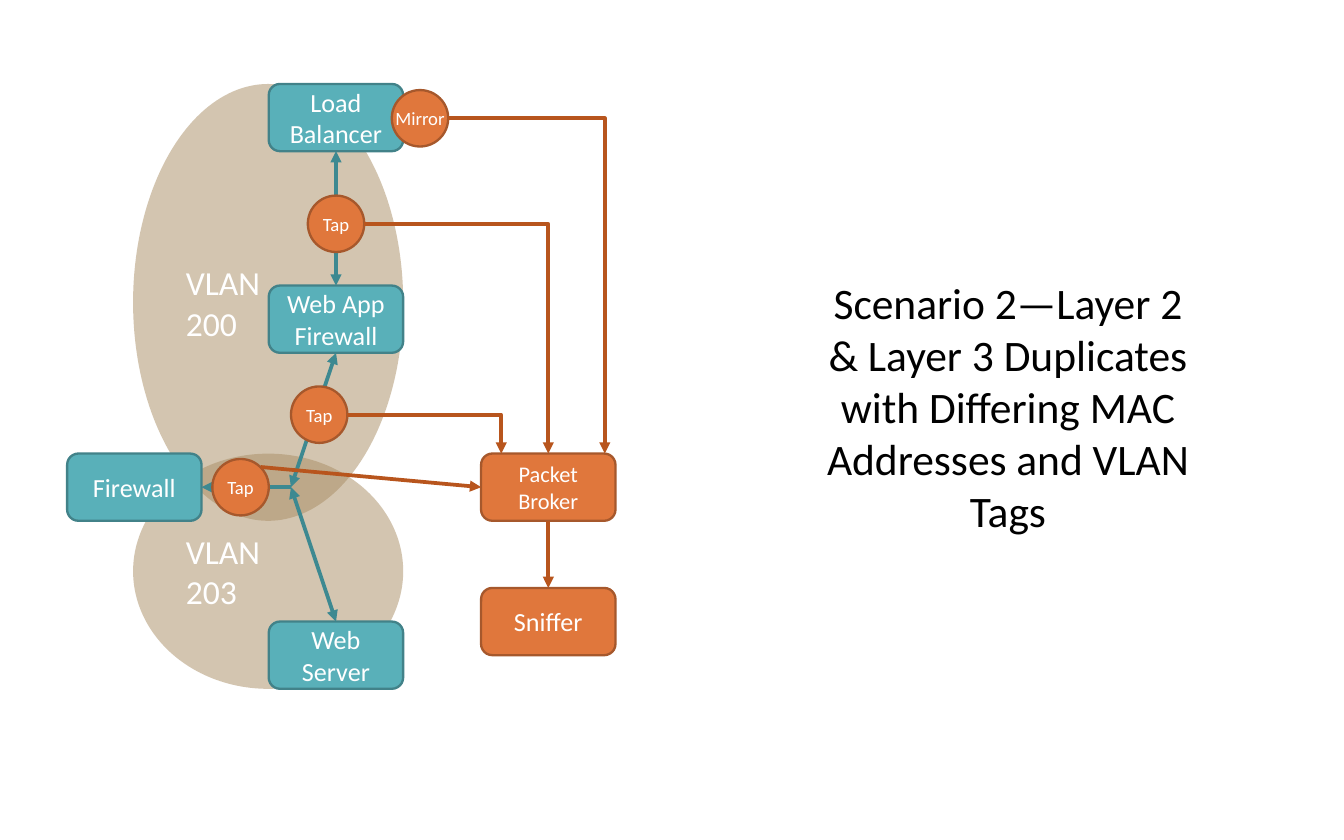
import pptx
import pptx.util
import pptx.dml.color
import pptx.enum.shapes
import pptx.enum.text
import pptx.oxml
import pptx.oxml.ns

Pt = pptx.util.Pt
RGB = pptx.dml.color.RGBColor.from_string
KIND = pptx.enum.shapes.MSO_SHAPE
LINK = pptx.enum.shapes.MSO_CONNECTOR
ALIGN = pptx.enum.text.PP_ALIGN
MID = pptx.enum.text.MSO_ANCHOR.MIDDLE
qn = pptx.oxml.ns.qn

INK = {
    "sand": "A98D63", "white": "FFFFFF", "black": "000000",
    "teal": "59B0B9", "teal edge": "428289", "teal line": "3D8991",
    "rust": "E0773C", "rust edge": "A6582C", "rust line": "B8551D",
}

deck = pptx.Presentation()
deck.slide_width = pptx.util.Inches(10)
deck.slide_height = pptx.util.Inches(6.25)
W, H = deck.slide_width, deck.slide_height
slide = deck.slides.add_slide(deck.slide_layouts[6])

# Grid: 20 columns across, square cells, first row a tenth of the way down
CELL = W // 20
TOP = H // 10


def node(kind, col, row, wide, high, text, size, hue, align=ALIGN.CENTER):
    box = slide.shapes.add_shape(
        kind, int(col * CELL), int(TOP + row * CELL), int(wide * CELL), int(high * CELL))
    box.shadow.inherit = False
    box.fill.solid()
    box.fill.fore_color.rgb = RGB(INK[hue])
    if hue + " edge" in INK:
        box.line.color.rgb = RGB(INK[hue + " edge"])
        box.line.width = Pt(1.25)
    else:
        box.line.fill.background()
    frame = box.text_frame
    frame.vertical_anchor = MID
    frame.text = text
    for para in frame.paragraphs:
        para.alignment = align
        para.font.size = Pt(size)
        para.font.name = "Calibri"
        para.font.color.rgb = RGB(INK["white"])
    return box


def link(start, end, hue, ends, bent=False):
    (c1, r1), (c2, r2) = start, end
    line = slide.shapes.add_connector(
        LINK.ELBOW if bent else LINK.STRAIGHT,
        int(c1 * CELL), int(TOP + r1 * CELL), int(c2 * CELL), int(TOP + r2 * CELL))
    line.line.color.rgb = RGB(INK[hue])
    line.line.width = Pt(2)
    props = line._element.spPr
    if bent:
        props.find(qn("a:prstGeom")).set("prst", "bentConnector2")
    for tag in ends:
        pptx.oxml.ns  # arrowheads follow the line colour
        props.find(qn("a:ln")).append(pptx.oxml.parse_xml(
            f'<a:{tag} {pptx.oxml.ns.nsdecls("a")} type="triangle"/>'))
    props.append(pptx.oxml.parse_xml(f'<a:effectLst {pptx.oxml.ns.nsdecls("a")}/>'))


# VLAN areas, half transparent
for name, row, high in (("VLAN\n200", 0, 6.5), ("VLAN\n203", 5.5, 3.5)):
    area = node(KIND.OVAL, 1.98, row, 4.02, high, name, 18, "sand", ALIGN.LEFT)
    tint = area._element.spPr.find(qn("a:solidFill"))[0]
    tint.append(pptx.oxml.parse_xml(
        f'<a:alpha {pptx.oxml.ns.nsdecls("a")} val="50000"/>'))

# Title
title = slide.shapes.add_textbox(int(W * 0.6), H // 15, int(W * 0.3), H * 5 // 6)
frame = title.text_frame
frame.word_wrap = True
frame.vertical_anchor = MID
para = frame.paragraphs[0]
para.text = "Scenario 2—Layer 2 & Layer 3 Duplicates with Differing MAC Addresses and VLAN Tags"
para.alignment = ALIGN.CENTER
para.font.size = Pt(23.3)
para.font.name = "Calibri"
para.font.color.rgb = RGB(INK["black"])

# Devices
SIDE = 7.16
for name, col, row, size, hue in (
    ("Load Balancer", 4, 0, 14, "teal"),
    ("Web App Firewall", 4, 3, 14, "teal"),
    ("Web Server", 4, 8, 14, "teal"),
    ("Firewall", 1, 5.5, 14, "teal"),
    ("Packet Broker", SIDE, 5.5, 12, "rust"),
    ("Sniffer", SIDE, 7.5, 14, "rust"),
):
    node(KIND.ROUNDED_RECTANGLE, col, row, 2, 1, name, size, hue)

# Network traffic, meeting at one joint
BOTH = ("headEnd", "tailEnd")
joint = (4.33, 6)
link((5, 1), (5, 3), "teal line", BOTH)
link((5, 4), joint, "teal line", BOTH)
link((3, 6), joint, "teal line", BOTH[:1])
link(joint, (5, 8), "teal line", BOTH)

# Taps and mirror, placed by their centres
SPAN = 0.84
for name, col, row in (
    ("Mirror", 6.25, 0.51), ("Tap", 5, 2.08), ("Tap", 4.75, 4.92), ("Tap", 3.58, 6),
):
    disc = node(KIND.OVAL, col - SPAN / 2, row - SPAN / 2, SPAN, SPAN, name, 10, "rust")
    disc.text_frame.margin_left = disc.text_frame.margin_right = 0
    disc.text_frame.word_wrap = False

# Copied traffic into the broker and on to the sniffer
hub = SIDE + 1
for start, end, bent in (
    ((6.67, 0.51), (9, 5.5), True),
    ((5.42, 2.08), (hub, 5.5), True),
    ((5.17, 4.92), (7.46, 5.5), True),
    ((hub, 6.5), (hub, 7.5), False),
    ((3.88, 5.7), (SIDE, 6), False),
):
    link(start, end, "rust line", BOTH[1:], bent)

deck.save("out.pptx")
